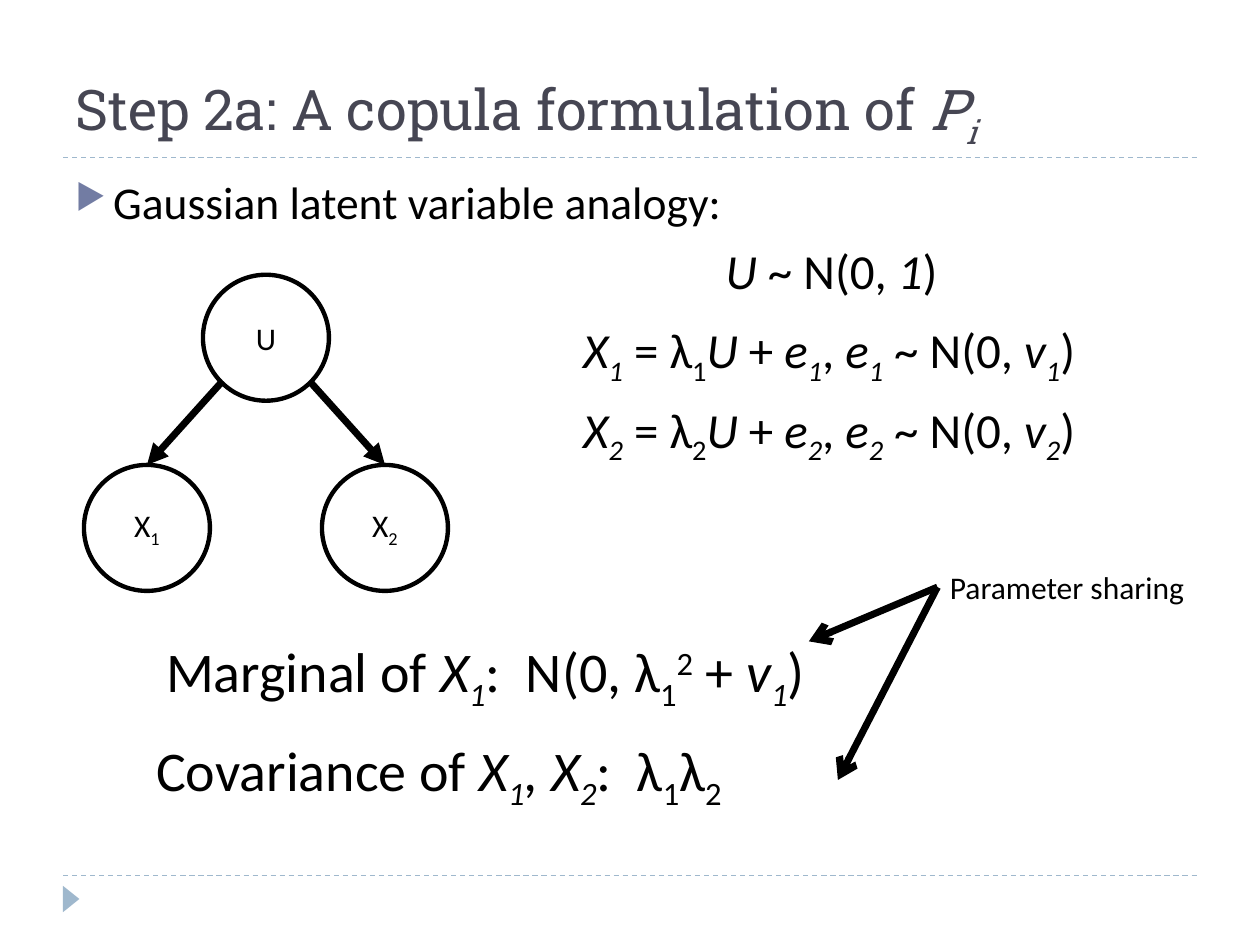
import dataclasses

import lxml.etree
import pptx
import pptx.dml.color
import pptx.enum.dml
import pptx.enum.shapes
import pptx.enum.text
import pptx.oxml.ns
import pptx.util

Pt = pptx.util.Pt
qn = pptx.oxml.ns.qn
RGB = pptx.dml.color.RGBColor.from_string
Shapes = pptx.enum.shapes.MSO_SHAPE
Anchor = pptx.enum.text.MSO_ANCHOR
Align = pptx.enum.text.PP_ALIGN
Fit = pptx.enum.text.MSO_AUTO_SIZE
Dash = pptx.enum.dml.MSO_LINE.DASH


@dataclasses.dataclass(frozen=True)
class Theme:
    ink: str = "000000"
    paper: str = "FFFFFF"
    title: str = "464653"
    rule: str = "9FB8CD"
    bullet: str = "727CA3"
    head: str = "Roboto Slab"
    body: str = "Calibri"
    large: int = 32
    math: int = 28
    lead: int = 26
    small: int = 18


def assign(target, values):
    for name, value in values.items():
        setattr(target, name, value)


def var(name, index):
    """Italic symbol with an italic subscript."""
    return [(name, "i"), (index, "i_")]


def load(index):
    """Upright lambda with a subscript."""
    return [("λ", ""), (index, "_")]


class Painter:
    def __init__(self, theme, slide):
        self.theme = theme
        self.slide = slide

    def letter(self, frame, runs, size, face=None, color=None, align=Align.LEFT):
        """Fill a frame with (text, marks) runs: i italic, _ subscript, ^ superscript."""
        par = frame.paragraphs[0]
        par.alignment = align
        for text, marks in runs:
            run = par.add_run()
            run.text = text
            assign(run.font, {"name": face or self.theme.body, "size": Pt(size),
                              "italic": "i" in marks, "bold": False})
            run.font.color.rgb = RGB(color or self.theme.ink)
            for mark, shift in (("_", "-25000"), ("^", "30000")):
                if mark in marks:
                    run.font._element.set("baseline", shift)
        return par

    def title(self, box, runs):
        shape = self.slide.shapes.title
        assign(shape, dict(zip(("left", "top", "width", "height"), map(Pt, box))))
        assign(shape.text_frame, {"vertical_anchor": Anchor.BOTTOM, "word_wrap": True})
        self.letter(shape.text_frame, runs, self.theme.large, self.theme.head, self.theme.title)

    def text(self, box, runs, size, fit=Fit.SHAPE_TO_FIT_TEXT):
        frame = self.slide.shapes.add_textbox(*map(Pt, box)).text_frame
        assign(frame, {"word_wrap": True, "auto_size": fit})
        return self.letter(frame, runs, size)

    def bullet(self, box, runs, size):
        par = self.text(box, runs, size, Fit.NONE)
        par.space_before = Pt(6)
        props = par._p.get_or_add_pPr()
        indent = Pt(21.6)
        props.set("marL", str(indent))
        props.set("indent", str(-indent))
        color = lxml.etree.SubElement(props, qn("a:buClr"))
        lxml.etree.SubElement(color, qn("a:srgbClr"), val=self.theme.bullet)
        lxml.etree.SubElement(props, qn("a:buSzPct"), val="76000")
        lxml.etree.SubElement(props, qn("a:buChar"), char="▶")

    def shape(self, kind, box, fill):
        shape = self.slide.shapes.add_shape(kind, *map(Pt, box))
        shape.shadow.inherit = False
        shape.fill.solid()
        shape.fill.fore_color.rgb = RGB(fill)
        return shape

    def marker(self, box):
        shape = self.shape(Shapes.ISOSCELES_TRIANGLE, box, self.theme.rule)
        shape.rotation = 90
        shape.line.fill.background()

    def node(self, left, top, side, runs):
        shape = self.shape(Shapes.OVAL, (left, top, side, side), self.theme.paper)
        shape.line.color.rgb = RGB(self.theme.ink)
        shape.line.width = Pt(2.5)
        shape.text_frame.vertical_anchor = Anchor.MIDDLE
        self.letter(shape.text_frame, runs, self.theme.small, align=Align.CENTER)
        return shape

    def line(self, start, end, color, width, dash=None, head=None):
        link = self.slide.shapes.add_connector(
            pptx.enum.shapes.MSO_CONNECTOR.STRAIGHT, *map(Pt, (*start, *end)))
        link.line.color.rgb = RGB(color)
        assign(link.line, {"width": Pt(width), "dash_style": dash})
        if head:
            lxml.etree.SubElement(link.get_or_add_ln(), qn("a:tailEnd"), type=head)
        lxml.etree.SubElement(link._element.spPr, qn("a:effectLst"))
        return link

    def rule(self, top):
        self.line((36, top), (684, top), self.theme.rule, 0.75, dash=Dash)

    def arrow(self, start, end, head):
        return self.line(start, end, self.theme.ink, 4, head=head)


def main():
    deck = pptx.Presentation()
    assign(deck, {"slide_width": Pt(720), "slide_height": Pt(540)})
    theme = Theme()
    pen = Painter(theme, deck.slides.add_slide(deck.slide_layouts[5]))

    for top in (500.4, 90):
        pen.rule(top)
    pen.marker((33.1, 509, 15.1, 9.4))
    pen.title((36, 12.2, 648, 77.8),
              [("Step 2a: A copula formulation of ", ""), *var("P", "i")])
    pen.bullet((36, 95.8, 648, 388.8), [("Gaussian latent variable analogy:", "")], theme.lead)

    side, mid, root, leaf, gap = 72, 152, 157, 265.7, 68
    pen.node(mid - side / 2, root, side, [("U", "")])
    for index, sign in (("1", -1), ("2", 1)):
        child = pen.node(mid + sign * gap - side / 2, leaf, side, [("X", ""), (index, "_")])
        reach = side / 2 * 0.5 ** 0.5
        link = pen.arrow((mid + sign * reach, root + side / 2 + reach),
                         (mid + sign * gap, leaf), "triangle")
        link.end_connect(child, 0)

    pen.text((407.5, 133.9, 150.5, 41),
             [("U", "i"), (" ~ N(0, ", ""), ("1", "i"), (")", "")], theme.math)
    for index, top in (("1", 179.3), ("2", 224.6)):
        pen.text((326.2, top, 324, 41), [
            *var("X", index), (" = ", ""), *load(index), ("U", "i"), (" + ", ""),
            *var("e", index), (", ", ""), *var("e", index), (" ~ N(0, ", ""),
            *var("v", index), (")", "")], theme.math)

    pen.text((87.8, 360, 396.7, 46), [
        ("Marginal of ", ""), *var("X", "1"), (":  N(0, ", ""), *load("1"), ("2", "^"),
        (" + ", ""), *var("v", "1"), (")", "")], theme.large)
    pen.text((82.1, 416.9, 365, 46), [
        ("Covariance of ", ""), *var("X", "1"), (", ", "i"), *var("X", "2"),
        (":  ", ""), *load("1"), *load("2")], theme.large)

    pen.text((535.7, 321.1, 169.2, 28.8), [("Parameter sharing", "")], theme.small)
    for end in ((462.2, 366.5), (478.8, 445.7)):
        pen.arrow((535.7, 335.5), end, "arrow")

    deck.save("out.pptx")


if __name__ == "__main__":
    main()
